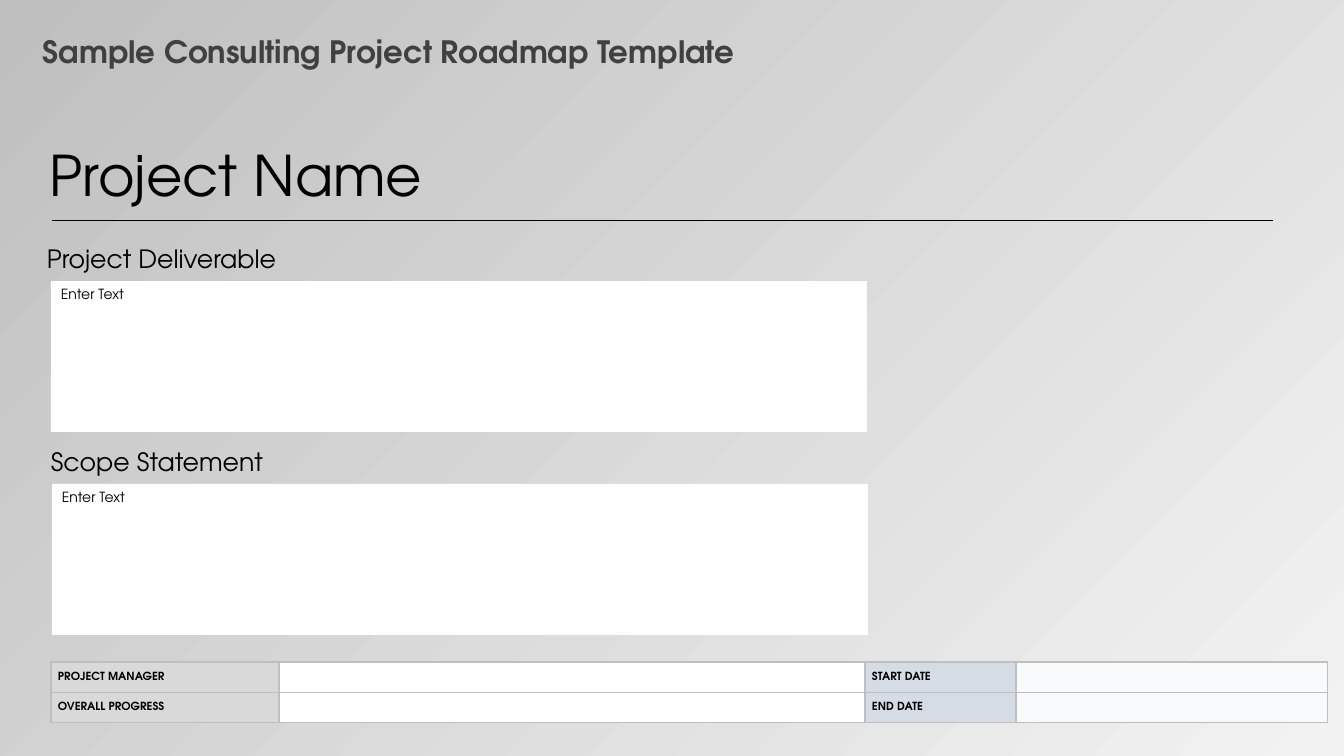
from lxml.etree import SubElement
from pptx import Presentation
from pptx.dml.color import RGBColor
from pptx.enum.shapes import MSO_CONNECTOR, MSO_SHAPE
from pptx.enum.text import MSO_ANCHOR, PP_ALIGN
from pptx.oxml.ns import qn
from pptx.util import Emu, Pt

FONT = "TeX Gyre Adventor"
BLACK = "000000"
WHITE = "FFFFFF"
BORDER = "BFBFBF"
COLUMN_WIDTHS = [228, 586, 151, 312]
COLUMN_FILLS = ["D9D9D9", WHITE, "D6DCE5", "F7F9FB"]
STATUS_ROWS = [
    ["PROJECT MANAGER", "", "START DATE", ""],
    ["OVERALL PROGRESS", "", "END DATE", ""],
]


def px(length):
    return Emu(round(length * 914400 / 100.8))


def color(value):
    return RGBColor.from_string(value)


def add_run(paragraph, text, size, text_color=BLACK, bold=False):
    run = paragraph.add_run()
    run.text = text
    run.font.name = FONT
    run.font.size = Pt(size)
    run.font.bold = bold
    run.font.color.rgb = color(text_color)


def add_text(slide, box, text, size, text_color=BLACK, bold=False):
    shape = slide.shapes.add_textbox(*map(px, box))
    shape.text_frame.word_wrap = True
    add_run(shape.text_frame.paragraphs[0], text, size, text_color, bold)


def add_background(slide):
    fill = slide.background.fill
    fill.gradient()
    fill.gradient_angle = 135
    for stop, (position, value) in zip(fill.gradient_stops, [(0, "F2F2F2"), (1, "BFBFBF")]):
        stop.position = position
        stop.color.rgb = color(value)


def add_header(slide, left, top, width):
    add_text(slide, (left, top, 868, 47), "Sample Consulting Project Roadmap Template", 22, "404040", True)
    add_text(slide, (left + 7, top + 108, width, 78), "Project Name", 40)
    rule_top = top + 192
    rule = slide.shapes.add_connector(
        MSO_CONNECTOR.STRAIGHT, px(left + 19), px(rule_top), px(left + 1240), px(rule_top)
    )
    rule.line.color.rgb = color(BLACK)
    rule.line.width = Pt(0.5)
    SubElement(rule._element.spPr, qn("a:effectLst"))


def add_section(slide, left, top, heading, heading_left):
    add_text(slide, (heading_left, top, 307, 40), heading, 18)
    panel = slide.shapes.add_shape(MSO_SHAPE.RECTANGLE, px(left), px(top + 43), px(816), px(151))
    panel.shadow.inherit = False
    panel.fill.solid()
    panel.fill.fore_color.rgb = color(WHITE)
    panel.line.fill.background()
    frame = panel.text_frame
    frame.word_wrap = True
    frame.vertical_anchor = MSO_ANCHOR.TOP
    paragraph = frame.paragraphs[0]
    paragraph.alignment = PP_ALIGN.LEFT
    add_run(paragraph, "Enter Text", 10)


def set_borders(cell):
    properties = cell._tc.get_or_add_tcPr()
    for position, side in enumerate(["a:lnL", "a:lnR", "a:lnT", "a:lnB"]):
        line = properties.makeelement(qn(side), {"w": str(Pt(1))})
        fill = SubElement(line, qn("a:solidFill"))
        SubElement(fill, qn("a:srgbClr"), val=BORDER)
        properties.insert(position, line)


def add_status_table(slide, left, top, row_height):
    frame = slide.shapes.add_table(
        len(STATUS_ROWS), len(COLUMN_WIDTHS), px(left), px(top),
        px(sum(COLUMN_WIDTHS)), px(row_height * len(STATUS_ROWS)),
    )
    table = frame.table
    for column, width in zip(table.columns, COLUMN_WIDTHS):
        column.width = px(width)
    for row, texts in zip(table.rows, STATUS_ROWS):
        row.height = px(row_height)
        for cell, text, fill in zip(row.cells, texts, COLUMN_FILLS):
            cell.fill.solid()
            cell.fill.fore_color.rgb = color(fill)
            cell.vertical_anchor = MSO_ANCHOR.MIDDLE
            cell.margin_left = cell.margin_right = px(7)
            cell.margin_top = cell.margin_bottom = 0
            paragraph = cell.text_frame.paragraphs[0]
            paragraph.line_spacing = 1.07
            add_run(paragraph, text, 8, bold=True)
            set_borders(cell)


def main():
    presentation = Presentation()
    presentation.slide_width = px(1344)
    presentation.slide_height = px(756)
    slide = presentation.slides.add_slide(presentation.slide_layouts[6])
    add_background(slide)
    add_header(slide, 33, 28, 1237)
    add_section(slide, 51, 238, "Project Deliverable", 37)
    add_section(slide, 52, 441, "Scope Statement", 41)
    add_status_table(slide, 51, 662, 30)
    presentation.save("out.pptx")


if __name__ == "__main__":
    main()
